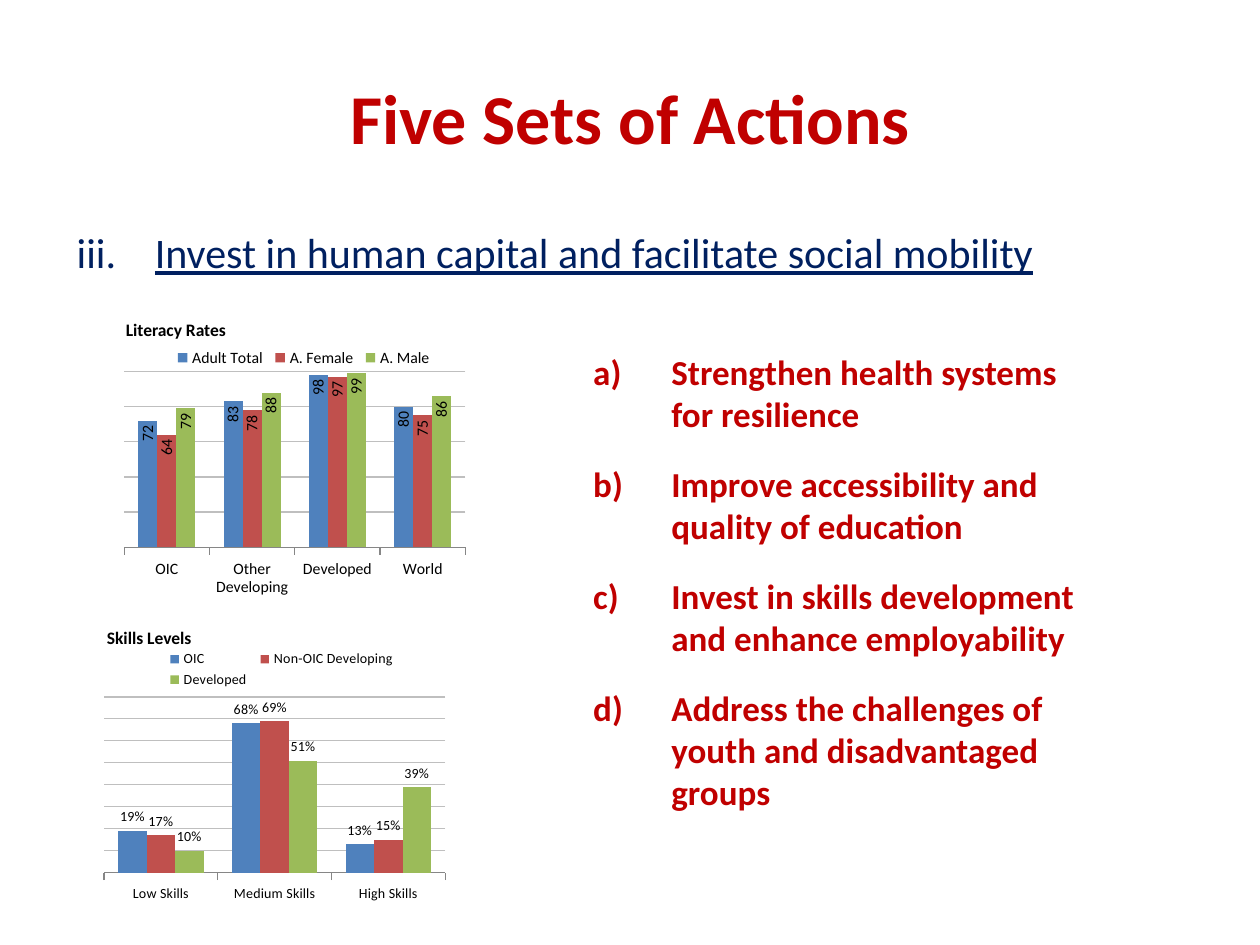
"""Build the "Five Sets of Actions" slide with two column charts and a lettered list."""
from dataclasses import dataclass

from pptx import Presentation
from pptx import util as u
from pptx.chart.data import CategoryChartData
from pptx.dml.color import RGBColor
from pptx.enum import chart as charts, text
from pptx.oxml import parse_xml
from pptx.oxml.ns import nsdecls
from pptx.oxml.xmlchemy import OxmlElement


@dataclass(frozen=True)
class Theme:
    font: str = "Calibri"
    red: str = "C00000"
    navy: str = "002060"
    black: str = "000000"
    grid: str = "BFBFBF"
    axis: str = "868686"
    series: tuple = ("4F81BD", "C0504D", "9BBB59")
    title: int = 40
    heading: int = 24
    action: int = 20
    caption: int = 10


THEME = Theme()
WIDTH, HEIGHT = 10, 7.5
CHART_SIZE = (2.82, 2.18)
CAPTION_SIZE = (2.38, 0.27)
INDENT = 0.62

TITLE = "Five Sets of Actions"
HEADING = "Invest in human capital and facilitate social mobility"
ACTIONS = [
    "Strengthen health systems for resilience",
    "Improve accessibility and quality of education",
    "Invest in skills development and enhance employability",
    "Address the challenges of youth and disadvantaged groups",
]
CHARTS = [
    dict(
        caption="Skills Levels", caption_at=(0.75, 4.9), at=(0.77, 5.03),
        categories=["Low Skills", "Medium Skills", "High Skills"],
        series={
            "OIC": (0.19, 0.68, 0.13),
            "Non-OIC Developing": (0.17, 0.69, 0.15),
            "Developed": (0.1, 0.51, 0.39),
        },
        size=8, gap=100, maximum=0.8, step=0.1, number_format="0%",
        label_position=charts.XL_LABEL_POSITION.OUTSIDE_END, rotation=0,
        plot_area=(0.02, 0.23, 0.96, 0.64), legend_area=(0.18, 0.05, 0.68, 0.16),
    ),
    dict(
        caption="Literacy Rates", caption_at=(0.9, 2.46), at=(0.93, 2.6),
        categories=["OIC", "Other Developing", "Developed", "World"],
        series={
            "Adult Total": (72, 83, 98, 80),
            "A. Female": (64, 78, 97, 75),
            "A. Male": (79, 88, 99, 86),
        },
        size=9, gap=150, maximum=100, step=20, number_format="0",
        label_position=charts.XL_LABEL_POSITION.INSIDE_END, rotation=-90,
        plot_area=(0.02, 0.16, 0.96, 0.64), legend_area=(0.15, 0.07, 0.75, 0.08),
    ),
]


def style(font, size, color, bold=False, underline=False):
    font.name, font.size = THEME.font, u.Pt(size)
    font.bold, font.underline = bold, underline
    font.color.rgb = RGBColor.from_string(color)


def box(position, size):
    return [u.Inches(value) for value in (*position, *size)]


def add_text(slide, position, size, lines):
    shape = slide.shapes.add_textbox(*box(position, size))
    frame = shape.text_frame
    frame.word_wrap = True
    frame.text = "\n".join(lines)
    return frame.paragraphs


def number(paragraph, scheme, start=1):
    properties = paragraph._p.get_or_add_pPr()
    properties.set("marL", str(u.Inches(INDENT)))
    properties.set("indent", str(-u.Inches(INDENT)))
    bullet = OxmlElement("a:buAutoNum")
    bullet.set("type", scheme)
    if start > 1:
        bullet.set("startAt", str(start))
    properties.append(bullet)


def add_numbered(slide, position, size, lines, scheme, start, points, **look):
    for paragraph in add_text(slide, position, size, lines):
        paragraph.space_before = u.Pt(points * 0.2)
        paragraph.space_after = u.Pt(12)
        number(paragraph, scheme, start)
        style(paragraph.font, points, **look)


def place(element, index, area, inner=False):
    for layout in element.xpath("c:layout"):
        element.remove(layout)
    target = '<c:layoutTarget val="inner"/>' if inner else ""
    modes = "".join(f'<c:{side}Mode val="edge"/>' for side in "xy")
    shares = "".join(f'<c:{name} val="{share}"/>' for name, share in zip("xywh", area))
    element.insert(index, parse_xml(
        f'<c:layout {nsdecls("c")}><c:manualLayout>{target}{modes}{shares}'
        "</c:manualLayout></c:layout>"))


def style_axes(chart, content):
    value_axis, category_axis = chart.value_axis, chart.category_axis
    value_axis.visible = False
    value_axis.minimum_scale, value_axis.maximum_scale = 0, content["maximum"]
    value_axis.major_unit = content["step"]
    lines = ((value_axis.major_gridlines.format.line, THEME.grid),
             (category_axis.format.line, THEME.axis))
    for line, color in lines:
        line.width = u.Pt(0.75)
        line.color.rgb = RGBColor.from_string(color)
    category_axis.major_tick_mark = charts.XL_TICK_MARK.OUTSIDE


def style_series(plot, content):
    plot.gap_width, plot.overlap = content["gap"], 0
    plot.vary_by_categories = False
    for series, color in zip(plot.series, THEME.series):
        series.format.fill.solid()
        series.format.fill.fore_color.rgb = RGBColor.from_string(color)
        labels = series.data_labels
        labels.show_value = True
        labels.number_format = content["number_format"]
        labels.number_format_is_linked = False
        labels.position = content["label_position"]
        style(labels.font, content["size"], THEME.black)


def add_column_chart(slide, content):
    data = CategoryChartData(number_format=content["number_format"])
    data.categories = content["categories"]
    for name, values in content["series"].items():
        data.add_series(name, values)
    frame = slide.shapes.add_chart(
        charts.XL_CHART_TYPE.COLUMN_CLUSTERED, *box(content["at"], CHART_SIZE), data)
    chart = frame.chart
    chart.has_title = False
    style(chart.font, content["size"], THEME.black)
    style_axes(chart, content)
    style_series(chart.plots[0], content)
    chart.has_legend = True
    chart.legend.position = charts.XL_LEGEND_POSITION.TOP
    chart.legend.include_in_layout = False
    root = chart.element
    for body in root.xpath(".//c:dLbls//a:bodyPr"):
        body.set("rot", str(content["rotation"] * 60000))
        body.set("vert", "horz")
    place(root.xpath(".//c:plotArea")[0], 0, content["plot_area"], inner=True)
    place(root.xpath(".//c:legend")[0], 1, content["legend_area"])


def add_caption(slide, content):
    paragraph = add_text(slide, content["caption_at"], CAPTION_SIZE, [content["caption"]])[0]
    paragraph.line_spacing = 1.15
    paragraph.space_before, paragraph.space_after = u.Pt(3), u.Pt(6)
    style(paragraph.font, THEME.caption, THEME.black, bold=True)


def main():
    presentation = Presentation()
    presentation.slide_width, presentation.slide_height = u.Inches(WIDTH), u.Inches(HEIGHT)
    slide = presentation.slides.add_slide(presentation.slide_layouts[5])
    title = slide.shapes.title
    title.left, title.top, title.width, title.height = box((0.5, 0.3), (9, 1.25))
    title.text_frame.text = TITLE
    title.text_frame.vertical_anchor = text.MSO_ANCHOR.MIDDLE
    paragraph = title.text_frame.paragraphs[0]
    paragraph.alignment = text.PP_ALIGN.CENTER
    style(paragraph.font, THEME.title, THEME.red, bold=True)
    add_numbered(slide, (0.51, 1.75), (8.99, 0.78), [HEADING], "romanLcPeriod", 3,
                 THEME.heading, color=THEME.navy, underline=True)
    add_numbered(slide, (4.61, 2.73), (4.25, 4.49), ACTIONS, "alphaLcParenR", 1,
                 THEME.action, color=THEME.red, bold=True)
    for content in CHARTS:
        add_column_chart(slide, content)
        add_caption(slide, content)
    presentation.save("out.pptx")


if __name__ == "__main__":
    main()
